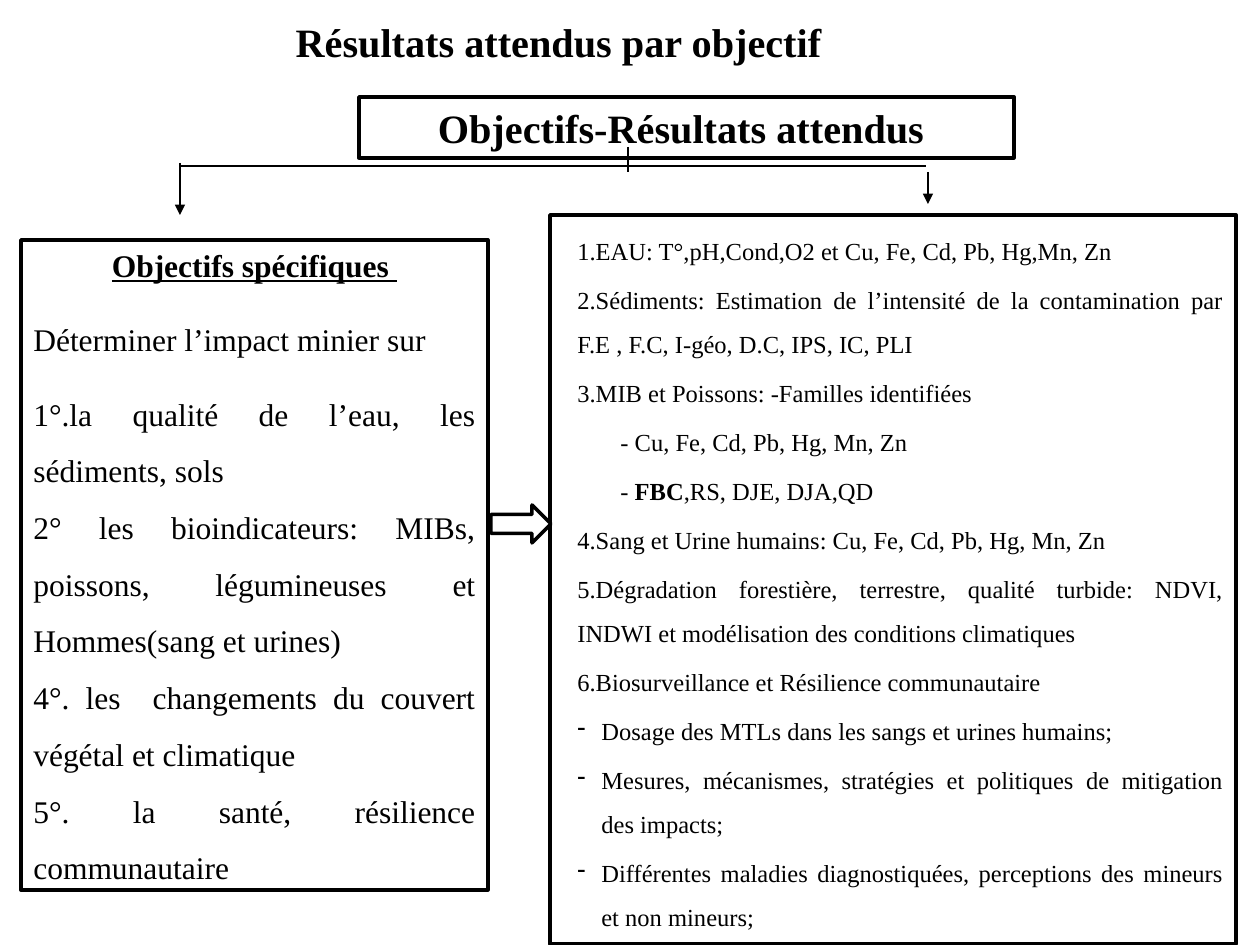
from lxml import etree
from pptx import Presentation
from pptx import util as u
from pptx.dml.color import RGBColor
from pptx.enum import shapes, text
from pptx.oxml.ns import qn

SCALE = 914400 / 126
BLACK = RGBColor(0x00, 0x00, 0x00)
WHITE = RGBColor(0xFF, 0xFF, 0xFF)
FONT = "Times New Roman"
LEFT, CENTER, JUSTIFY = (text.PP_ALIGN.LEFT, text.PP_ALIGN.CENTER,
                         text.PP_ALIGN.JUSTIFY)

GOALS = [
    "1°.la qualité de l’eau, les sédiments, sols",
    "2° les bioindicateurs: MIBs, poissons, légumineuses et Hommes(sang et urines)",
    "4°. les  changements du couvert végétal et climatique",
    "5°. la santé, résilience communautaire",
]
# Each result: left margin, first-line indent, bullet, then (text, bold) runs
MAIN, SUB, DASH = (15, 0, None), (58, 0, None), (39, -24, "-")
RESULTS = [
    (MAIN, [("1.EAU: T°,pH,Cond,O2 et Cu, Fe, Cd, Pb, Hg,Mn, Zn", False)]),
    (MAIN, [("2.Sédiments: Estimation de l’intensité de la contamination par "
             "F.E , F.C, I-géo, D.C, IPS, IC, PLI", False)]),
    (MAIN, [("3.MIB et Poissons: -Familles identifiées", False)]),
    (SUB, [("- Cu, Fe, Cd, Pb, Hg, Mn, Zn", False)]),
    (SUB, [("- ", False), ("FBC", True), (",RS, DJE, DJA,QD", False)]),
    (MAIN, [("4.Sang et Urine humains: Cu, Fe, Cd, Pb, Hg, Mn, Zn", False)]),
    (MAIN, [("5.Dégradation forestière, terrestre, qualité turbide: NDVI, "
             "INDWI et modélisation des conditions climatiques", False)]),
    (MAIN, [("6.Biosurveillance et Résilience communautaire", False)]),
    (DASH, [("Dosage des MTLs dans les sangs et urines humains;", False)]),
    (DASH, [("Mesures, mécanismes, stratégies et politiques de mitigation "
             "des impacts;", False)]),
    (DASH, [("Différentes maladies diagnostiquées, perceptions des mineurs "
             "et non mineurs;", False)]),
]


def px(n):
    return u.Emu(round(n * SCALE))


def add_text(tf, runs, size, align=JUSTIFY, bold=False, underline=False,
             spacing=1.0, before=0, after=0, margin=0, indent=0, bullet=None):
    """Fill the empty first paragraph or add one; runs is a string or (text, bold) pairs."""
    p = tf.paragraphs[0] if not tf.text else tf.add_paragraph()
    p.alignment, p.line_spacing = align, spacing
    p.space_before, p.space_after = u.Pt(before), u.Pt(after)
    pPr = p._p.get_or_add_pPr()
    pPr.set("marL", str(px(margin)))
    pPr.set("indent", str(px(indent)))
    if bullet:
        etree.SubElement(pPr, qn("a:buChar")).set("char", bullet)
    for words, is_bold in [(runs, bold)] if isinstance(runs, str) else runs:
        r = p.add_run()
        r.text = words
        f = r.font
        f.name, f.size, f.bold, f.underline = FONT, u.Pt(size), is_bold, underline
        f.color.rgb = BLACK


def add_block(s, kind, x, y, w, h):
    sp = s.shapes.add_shape(kind, px(x), px(y), px(w), px(h))
    sp.shadow.inherit = False
    sp.fill.solid()
    sp.fill.fore_color.rgb = WHITE
    sp.line.color.rgb = BLACK
    sp.line.width = u.Pt(2)
    tf = sp.text_frame
    tf.word_wrap = True
    tf.vertical_anchor = text.MSO_ANCHOR.TOP
    return tf


def add_line(s, x1, y1, x2, y2, arrow=False):
    c = s.shapes.add_connector(shapes.MSO_CONNECTOR.STRAIGHT,
                               px(x1), px(y1), px(x2), px(y2))
    c.line.color.rgb = BLACK
    c.line.width = u.Pt(0.75)
    if arrow:
        ln = c.line._get_or_add_ln()
        etree.SubElement(ln, qn("a:tailEnd")).set("type", "triangle")
    etree.SubElement(c._element.spPr, qn("a:effectLst"))


def add_title(s, words):
    sp = s.shapes.title
    sp.left, sp.top, sp.width, sp.height = px(283), px(11), px(556), px(62)
    tf = sp.text_frame
    tf.word_wrap = False
    tf.auto_size = text.MSO_AUTO_SIZE.SHAPE_TO_FIT_TEXT
    tf.vertical_anchor = text.MSO_ANCHOR.TOP
    add_text(tf, words, 23, align=LEFT, bold=True)


def add_goals(s):
    tf = add_block(s, shapes.MSO_SHAPE.RECTANGLE, 21, 240, 467, 650)
    add_text(tf, "Objectifs spécifiques ", 18, align=CENTER, bold=True,
             underline=True, after=10)
    add_text(tf, "Déterminer l’impact minier sur", 18, spacing=1.5, after=10)
    for goal in GOALS:
        add_text(tf, goal, 18, spacing=1.5)


def add_results(s):
    tf = add_block(s, shapes.MSO_SHAPE.RECTANGLE, 550, 215, 686, 729)
    for (margin, indent, bullet), runs in RESULTS:
        add_text(tf, runs, 14, spacing=1.5, before=2.8, margin=margin,
                 indent=indent, bullet=bullet)


def main():
    prs = Presentation()
    prs.slide_width, prs.slide_height = px(1260), px(945)
    s = prs.slides.add_slide(prs.slide_layouts[5])
    add_title(s, "Résultats attendus par objectif")
    add_goals(s)
    header = add_block(s, shapes.MSO_SHAPE.RECTANGLE, 359, 97, 655, 61)
    add_text(header, "Objectifs-Résultats attendus ", 23, align=CENTER,
             bold=True, after=10)
    add_results(s)
    add_block(s, shapes.MSO_SHAPE.RIGHT_ARROW, 491, 505, 60, 38)
    add_line(s, 628, 147, 628, 172)
    add_line(s, 926, 166, 180, 166)
    add_line(s, 928, 172, 928, 204, arrow=True)
    add_line(s, 180, 163, 180, 215, arrow=True)
    prs.save("out.pptx")


if __name__ == "__main__":
    main()
